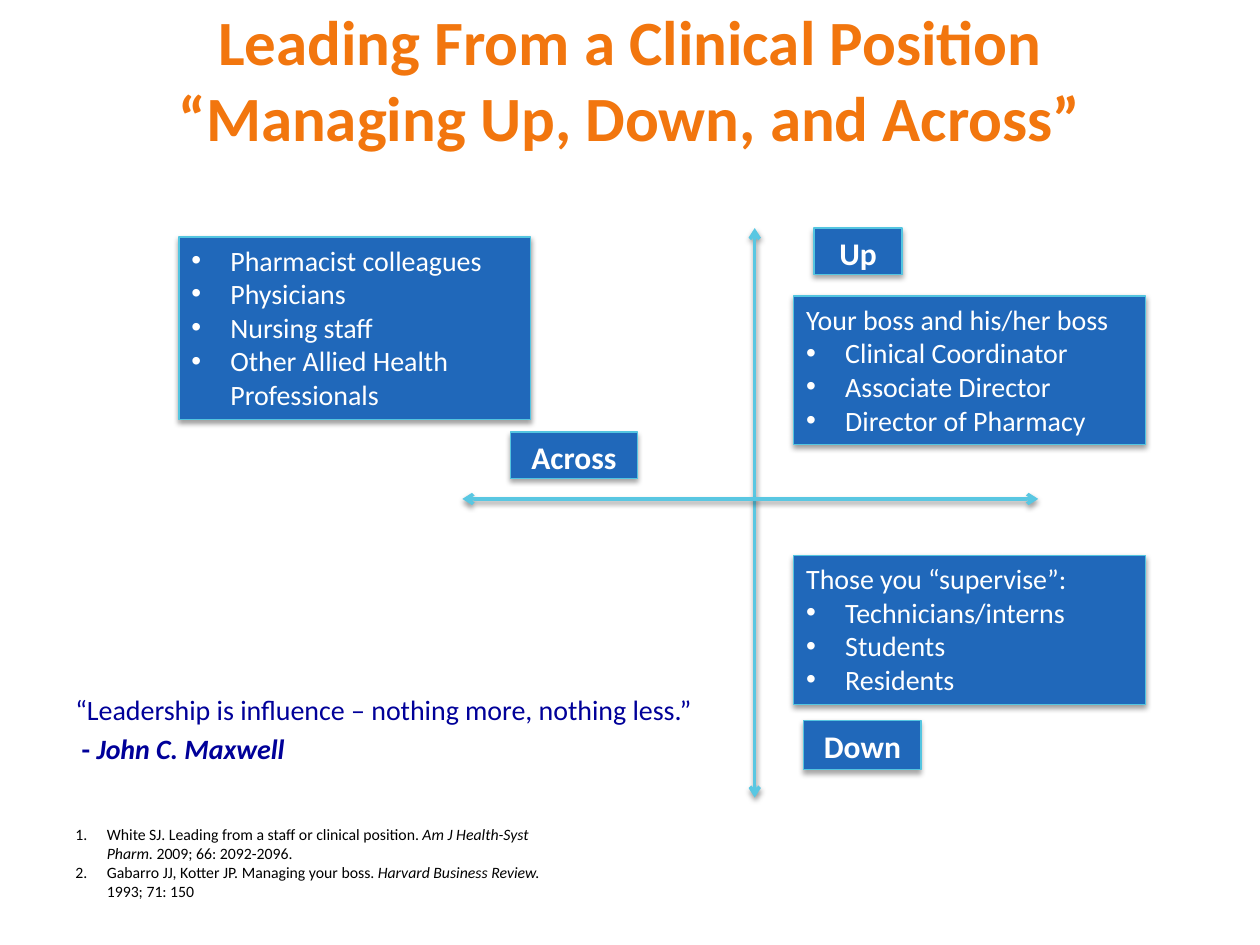
from lxml.etree import SubElement
from pptx import Presentation
from pptx.dml.color import RGBColor
from pptx.enum.shapes import MSO_CONNECTOR, MSO_SHAPE
from pptx.enum.text import MSO_ANCHOR, PP_ALIGN
from pptx.oxml.ns import qn
from pptx.util import Inches, Pt

FONT = "Calibri"
ORANGE, NAVY, BLACK, WHITE = "F2760E", "000099", "000000", "FFFFFF"
BOX_BLUE, BOX_EDGE, AXIS_BLUE = "2068BA", "54C5E0", "59C7E2"
CARD_LEFT, CARD_WIDTH = 6.3, 2.79


def color(hex_code):
    """Turn a hex string into a colour."""
    return RGBColor.from_string(hex_code)


def add_shadow(item, opacity=38, distance=1.6):
    """Give a shape or connector a soft shadow that falls downwards."""
    effects = SubElement(item._element.spPr, qn("a:effectLst"))
    outer = SubElement(effects, qn("a:outerShdw"), blurRad=str(Pt(3.1)), dist=str(Pt(distance)),
                       dir="5400000", rotWithShape="0")
    black = SubElement(outer, qn("a:srgbClr"), val=BLACK)
    SubElement(black, qn("a:alpha"), val=str(opacity * 1000))


def add_marker(paragraph, indent, numbered=False):
    """Give a paragraph a hanging bullet or number."""
    properties = paragraph._p.get_or_add_pPr()
    properties.set("marL", str(Inches(indent)))
    properties.set("indent", str(-Inches(indent)))
    if numbered:
        SubElement(properties, qn("a:buAutoNum"), type="arabicPeriod")
    else:
        SubElement(properties, qn("a:buFont"), typeface="Arial")
        SubElement(properties, qn("a:buChar"), char="•")


def add_run(paragraph, text, size=16, hex_code=WHITE, bold=False, italic=False):
    """Append formatted text to a paragraph."""
    run = paragraph.add_run()
    run.text = text
    run.font.name = FONT
    run.font.size = Pt(size)
    run.font.bold = bold
    run.font.italic = italic
    run.font.color.rgb = color(hex_code)


def next_paragraph(frame):
    """Return the first paragraph while it is empty, otherwise a new one."""
    first = frame.paragraphs[0]
    return frame.add_paragraph() if first.runs else first


def add_text_frame(slide, left, top, width, height):
    """Add a wrapping text box and return its frame."""
    box = slide.shapes.add_textbox(Inches(left), Inches(top), Inches(width), Inches(height))
    box.text_frame.word_wrap = True
    return box.text_frame


def add_box(slide, left, top, width, height, **shadow):
    """Add a blue rectangle and return its text frame."""
    box = slide.shapes.add_shape(MSO_SHAPE.RECTANGLE, Inches(left), Inches(top),
                                 Inches(width), Inches(height))
    box.fill.solid()
    box.fill.fore_color.rgb = color(BOX_BLUE)
    box.line.color.rgb = color(BOX_EDGE)
    box.line.width = Pt(0.75)
    add_shadow(box, **shadow)
    box.text_frame.word_wrap = True
    box.text_frame.vertical_anchor = MSO_ANCHOR.TOP
    return box.text_frame


def add_axis(slide, x1, y1, x2, y2):
    """Add a double-headed axis."""
    axis = slide.shapes.add_connector(MSO_CONNECTOR.STRAIGHT, Inches(x1), Inches(y1),
                                      Inches(x2), Inches(y2))
    axis.line.color.rgb = color(AXIS_BLUE)
    axis.line.width = Pt(2)
    line = axis.line._get_or_add_ln()
    for end in ("a:headEnd", "a:tailEnd"):
        SubElement(line, qn(end), type="arrow")
    add_shadow(axis)


def add_direction(slide, text, left, top, width, height):
    """Add a small box that names a direction."""
    frame = add_box(slide, left, top, width, height, opacity=35, distance=1.8)
    frame.word_wrap = False
    paragraph = frame.paragraphs[0]
    paragraph.alignment = PP_ALIGN.CENTER
    add_run(paragraph, text, size=18, bold=True)


def add_people(slide, left, top, height, people, heading=None):
    """Add a box that lists people under an optional heading."""
    frame = add_box(slide, left, top, CARD_WIDTH, height)
    if heading:
        add_run(next_paragraph(frame), heading)
    for person in people:
        paragraph = next_paragraph(frame)
        add_marker(paragraph, 0.31)
        add_run(paragraph, person)
    for paragraph in frame.paragraphs:
        paragraph.alignment = PP_ALIGN.LEFT


def add_title(slide):
    """Add the two-line title, raised within its box."""
    frame = add_text_frame(slide, 0.5, 0.3, 9, 1.25)
    frame.vertical_anchor = MSO_ANCHOR.MIDDLE
    frame.margin_bottom = Inches(0.66)
    for line in ("Leading From a Clinical Position", "“Managing Up, Down, and Across”"):
        paragraph = next_paragraph(frame)
        paragraph.alignment = PP_ALIGN.CENTER
        add_run(paragraph, line, size=36, hex_code=ORANGE, bold=True)


def add_quote(slide):
    """Add the quotation and its author."""
    frame = add_text_frame(slide, 0.5, 5.45, 5.8, 0.69)
    add_run(next_paragraph(frame), "“Leadership is influence – nothing more, nothing less.”",
            hex_code=NAVY)
    author = next_paragraph(frame)
    author.space_before = Pt(3)
    add_run(author, " - ", hex_code=NAVY, bold=True)
    add_run(author, "John C. Maxwell", hex_code=NAVY, bold=True, italic=True)


def add_references(slide):
    """Add the numbered references."""
    references = [
        ("White SJ. Leading from a staff or clinical position. ",
         "Am J Health-Syst Pharm. ", "2009; 66: 2092-2096."),
        ("Gabarro JJ, Kotter JP. Managing your boss. ",
         "Harvard Business Review. ", "1993; 71: 150"),
    ]
    frame = add_text_frame(slide, 0.5, 6.5, 4, 0.88)
    for article, journal, issue in references:
        paragraph = next_paragraph(frame)
        add_marker(paragraph, 0.25, numbered=True)
        add_run(paragraph, article, size=9, hex_code=BLACK)
        add_run(paragraph, journal, size=9, hex_code=BLACK, italic=True)
        add_run(paragraph, issue, size=9, hex_code=BLACK)


def main():
    """Build the slide and save it."""
    deck = Presentation()
    deck.slide_width, deck.slide_height = Inches(10), Inches(7.5)
    slide = deck.slides.add_slide(deck.slide_layouts[6])
    add_quote(slide)
    add_references(slide)
    add_axis(slide, 5.99, 1.81, 5.99, 6.33)
    add_axis(slide, 8.24, 3.96, 3.67, 3.96)
    add_direction(slide, "Up", 6.46, 1.81, 0.7, 0.37)
    add_direction(slide, "Down", 6.38, 5.72, 0.93, 0.39)
    add_direction(slide, "Across", 4.05, 3.43, 1.01, 0.37)
    add_people(slide, CARD_LEFT, 2.35, 1.18,
               ["Clinical Coordinator", "Associate Director", "Director of Pharmacy"],
               heading="Your boss and his/her boss")
    add_people(slide, CARD_LEFT, 4.41, 1.18, ["Technicians/interns", "Students", "Residents"],
               heading="Those you “supervise”:")
    add_people(slide, 1.42, 1.88, 1.45,
               ["Pharmacist colleagues", "Physicians", "Nursing staff",
                "Other Allied Health Professionals"])
    add_title(slide)
    deck.save("out.pptx")


if __name__ == "__main__":
    main()
